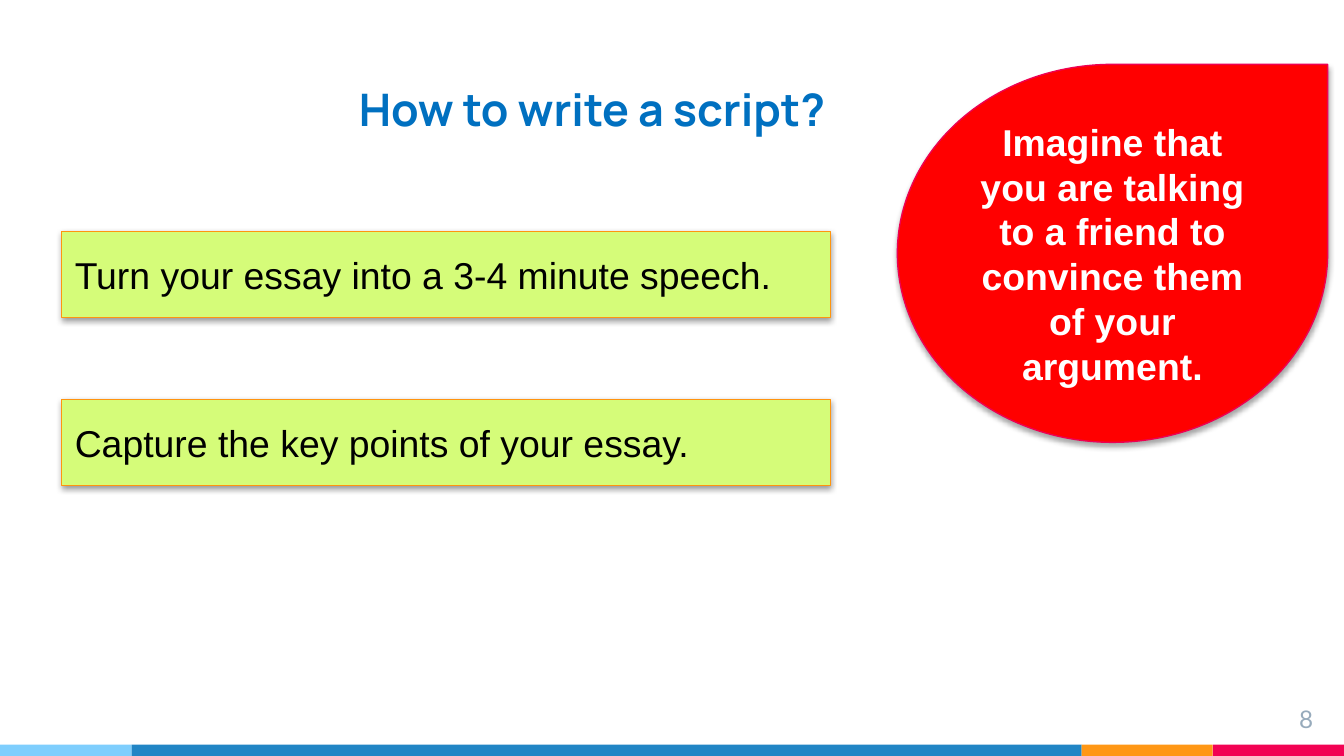
from lxml import etree
from pptx import Presentation
from pptx.dml.color import RGBColor
from pptx.enum import shapes, text
from pptx.oxml.ns import qn
from pptx.util import Pt


def style_text(shape, content, font, size, color, bold=False, align=text.PP_ALIGN.LEFT):
    """Fill a shape with one formatted paragraph."""
    frame = shape.text_frame
    frame.word_wrap = True
    frame.auto_size = text.MSO_AUTO_SIZE.NONE
    frame.text = content
    paragraph = frame.paragraphs[0]
    paragraph.alignment = align
    run_font = paragraph.runs[0].font
    run_font.name, run_font.size, run_font.bold = font, Pt(size), bold
    run_font.color.rgb = RGBColor.from_string(color)


def add_block(kind, left, top, width, height, fill, line=None, shadow=None):
    """Add a filled shape; shadow is (opacity percent, distance in points)."""
    shape = slide.shapes.add_shape(kind, Pt(left), Pt(top), Pt(width), Pt(height))
    shape.fill.solid()
    shape.fill.fore_color.rgb = RGBColor.from_string(fill)
    if line:
        shape.line.color.rgb = RGBColor.from_string(line)
        shape.line.width = Pt(0.75)
    else:
        shape.line.fill.background()
    shape.shadow.inherit = False
    if shadow:
        opacity, distance = shadow
        effects = shape._element.spPr.find(qn("a:effectLst"))
        outer = etree.SubElement(effects, qn("a:outerShdw"), blurRad=str(Pt(3.1)),
                                 dist=str(Pt(distance)), dir="5400000", rotWithShape="0")
        color = etree.SubElement(outer, qn("a:srgbClr"), val="000000")
        etree.SubElement(color, qn("a:alpha"), val=str(opacity * 1000))
    return shape


presentation = Presentation()
presentation.slide_width, presentation.slide_height = Pt(720), Pt(405)
slide = presentation.slides.add_slide(presentation.slide_layouts[5])
RECTANGLE = shapes.MSO_SHAPE.RECTANGLE

# Colour strip along the bottom edge
left = 0
for width, color in [(70.5, "7ECEFD"), (509, "2185C5"), (70.25, "FF9715"), (70.25, "F20253")]:
    add_block(RECTANGLE, left, 399, width, 6, color)
    left += width

# Title
title = slide.shapes.title
title.left, title.top, title.width, title.height = Pt(185), Pt(39), Pt(318), Pt(41)
style_text(title, "How to write a script?", "Manrope", 24, "0070C0", bold=True)
title.text_frame.vertical_anchor = text.MSO_ANCHOR.BOTTOM

# Slide number
number = slide.shapes.add_textbox(Pt(667.5), Pt(370), Pt(43), Pt(24.5))
style_text(number, "8", "Lato", 13, "97ABBC", align=text.PP_ALIGN.RIGHT)

# Both of these have equal insets on all sides
for shape in (title, number):
    frame = shape.text_frame
    frame.margin_left = frame.margin_right = frame.margin_top = frame.margin_bottom = Pt(7.2)

# Advice boxes
advice = ["Turn your essay into a 3-4 minute speech.", "Capture the key points of your essay."]
for index, sentence in enumerate(advice):
    box = add_block(RECTANGLE, 33, 124 + 90 * index, 412, 46, "D5FC79", "FF940F", (38, 1.6))
    style_text(box, sentence, "Arial", 20, "000000")
    box.text_frame.vertical_anchor = text.MSO_ANCHOR.MIDDLE

# Teardrop callout
callout = add_block(shapes.MSO_SHAPE.TEAR, 480.75, 34.5, 230.5, 202.5, "FF0000", "EF0051", (35, 1.8))
style_text(callout, "Imagine that you are talking to a friend to convince them of your argument.",
           "Arial", 20, "FFFFFF", bold=True, align=text.PP_ALIGN.CENTER)
callout.text_frame.vertical_anchor = text.MSO_ANCHOR.MIDDLE

presentation.save("out.pptx")
